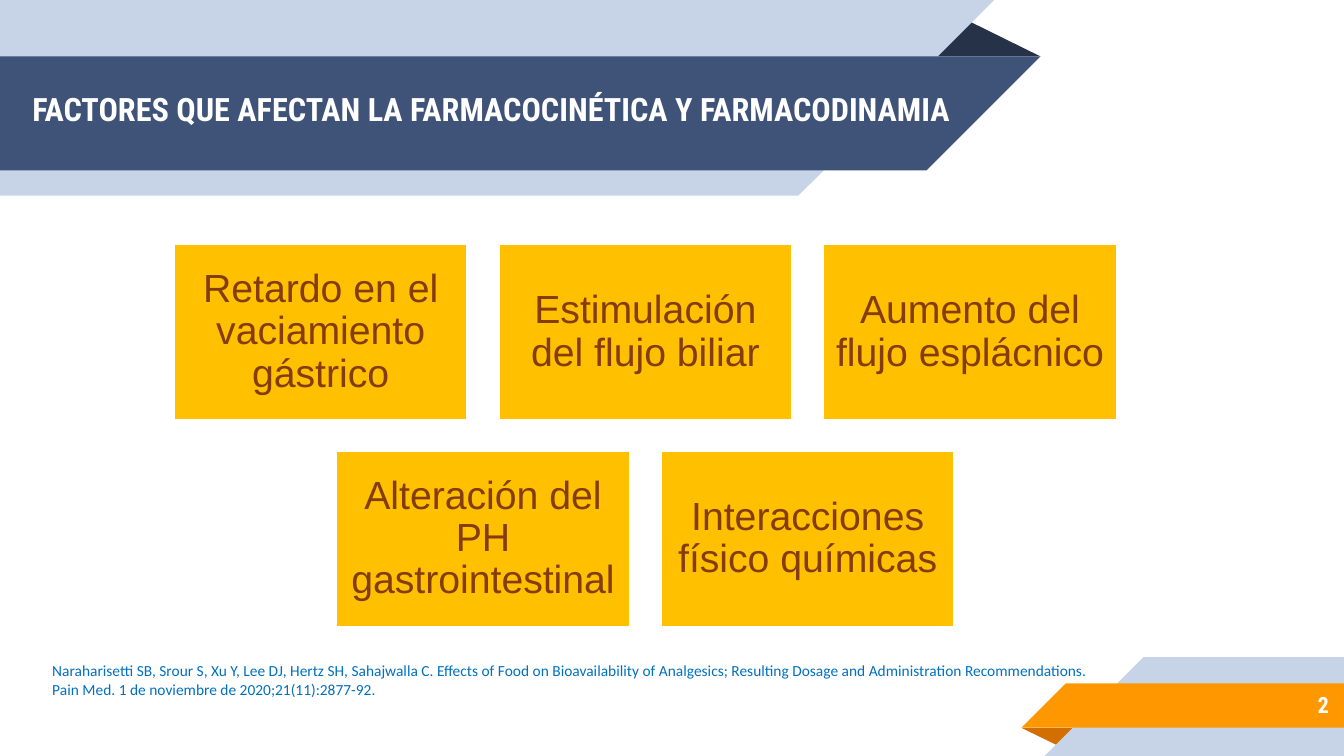
"""Build a slide on the factors that affect pharmacokinetics."""
from dataclasses import dataclass

from pptx import Presentation
from pptx.dml.color import RGBColor as RGB
from pptx.enum.shapes import MSO_SHAPE as SHAPE
from pptx.enum.text import MSO_ANCHOR as ANCHOR, MSO_AUTO_SIZE as FIT, PP_ALIGN as ALIGN
from pptx.util import Inches, Pt

WIDE, HIGH = 13.33, 7.5


@dataclass(frozen=True)
class Theme:
    navy: str = "3F5378"
    dark: str = "263248"
    pale: str = "C7D3E6"
    orange: str = "FF9800"
    rust: str = "D26F00"
    gold: str = "FFC000"
    brown: str = "843C0B"
    blue: str = "0070C0"
    white: str = "FFFFFF"
    head: str = "Roboto Condensed"
    body: str = "Arial"
    note: str = "Calibri"
    head_size: int = 23
    page_size: int = 16
    body_size: int = 28
    note_size: int = 11


def write(shape, *lines, font, size, color, bold=False, align=ALIGN.LEFT,
          anchor=ANCHOR.MIDDLE, pad=(0.1, 0.1), space=1.0):
    frame = shape.text_frame
    frame.text = "\n".join(lines)
    frame.word_wrap = True
    frame.auto_size = FIT.NONE
    frame.vertical_anchor = anchor
    frame.margin_left = frame.margin_right = Inches(pad[0])
    frame.margin_top = frame.margin_bottom = Inches(pad[1])
    for para in frame.paragraphs:
        para.alignment = align
        para.line_spacing = space
        para.space_before = Pt(0)
        for run in para.runs:
            run.font.name = font
            run.font.size = Pt(size)
            run.font.bold = bold
            run.font.color.rgb = RGB.from_string(color)


class Deck:
    def __init__(self, theme):
        self.theme = theme
        self.file = Presentation()
        self.file.slide_width, self.file.slide_height = Inches(WIDE), Inches(HIGH)
        self.slide = self.file.slides.add_slide(self.file.slide_layouts[5])
        self.shapes = self.slide.shapes

    def paint(self, shape, color, edge=None):
        shape.shadow.inherit = False
        shape.fill.solid()
        shape.fill.fore_color.rgb = RGB.from_string(color)
        if edge:
            shape.line.color.rgb = RGB.from_string(edge)
            shape.line.width = Pt(2)
        else:
            shape.line.fill.background()

    def band(self, color, *points):
        start, *rest = [(Inches(x), Inches(y)) for x, y in points]
        pen = self.shapes.build_freeform(*start)
        pen.add_line_segments(rest)
        self.paint(pen.convert_to_shape(), color)

    def title(self, text, *box):
        title = self.shapes.title
        title.left, title.top, title.width, title.height = map(Inches, box)
        title.element.getparent().append(title.element)
        write(title, text, font=self.theme.head, size=self.theme.head_size,
              color=self.theme.white, bold=True)

    def label(self, *lines, box, **style):
        write(self.shapes.add_textbox(*map(Inches, box)), *lines, **style)

    def card(self, text, *box):
        card = self.shapes.add_shape(SHAPE.RECTANGLE, *map(Inches, box))
        self.paint(card, self.theme.gold, self.theme.white)
        write(card, text, font=self.theme.body, size=self.theme.body_size,
              color=self.theme.brown, align=ALIGN.CENTER, pad=(0.12, 0.12), space=0.9)

    def cards(self, rows, mid, top, width, height, gap):
        for i, row in enumerate(rows):
            left = mid - (len(row) * (width + gap) - gap) / 2
            for j, text in enumerate(row):
                self.card(text, left + j * (width + gap), top + i * (height + gap),
                          width, height)


def main():
    theme = Theme()
    deck = Deck(theme)

    deck.band(theme.dark, (9.18, 0.56), (9.55, 0.18), (10.32, 0.56))
    deck.band(theme.pale, (0, 0), (9.86, 0), (7.92, 1.94), (0, 1.94))
    deck.band(theme.navy, (0, 0.56), (10.32, 0.56), (9.19, 1.69), (0, 1.69))
    deck.band(theme.rust, (10.13, 7.22), (10.7, 7.22), (10.52, 7.41))
    deck.band(theme.pale, (11.34, 6.52), (WIDE, 6.52), (WIDE, HIGH), (10.36, HIGH))
    deck.band(theme.orange, (10.57, 6.78), (WIDE, 6.78), (WIDE, 7.22), (10.13, 7.22))

    deck.title("FACTORES QUE AFECTAN LA FARMACOCINÉTICA Y FARMACODINAMIA",
               0.22, 0.52, 9.98, 1.12)
    deck.label("2", box=(11.11, 6.76, 2.17, 0.46), font=theme.head,
               size=theme.page_size, color=theme.white, bold=True, align=ALIGN.RIGHT)

    rows = [
        ["Retardo en el vaciamiento gástrico", "Estimulación del flujo biliar",
         "Aumento del flujo esplácnico"],
        ["Alteración del PH gastrointestinal", "Interacciones físico químicas"],
    ]
    deck.cards(rows, mid=6.4, top=2.42, width=2.92, height=1.75, gap=0.3)

    deck.label(
        "Naraharisetti SB, Srour S, Xu Y, Lee DJ, Hertz SH, Sahajwalla C. "
        "Effects of Food on Bioavailability of Analgesics; "
        "Resulting Dosage and Administration Recommendations.",
        "Pain Med. 1 de noviembre de 2020;21(11):2877-92.",
        box=(0.42, 6.51, 11.46, 0.47), font=theme.note, size=theme.note_size,
        color=theme.blue, anchor=ANCHOR.TOP, pad=(0.1, 0.05))

    deck.file.save("out.pptx")


if __name__ == "__main__":
    main()
